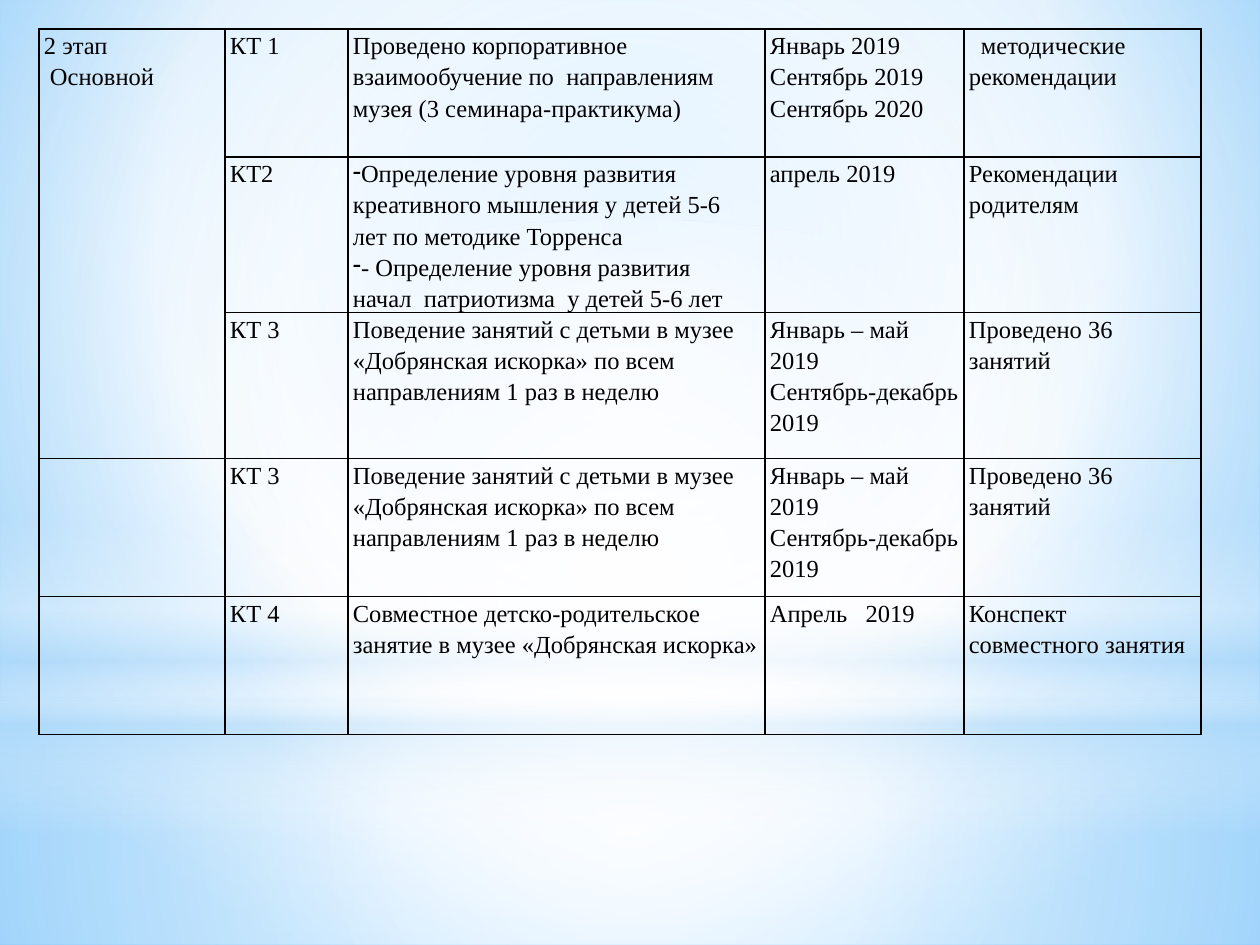
from dataclasses import dataclass
from lxml import etree
from pptx import Presentation
from pptx import util as u
from pptx.dml.color import RGBColor
from pptx.enum import shapes
from pptx.oxml import parse_xml
from pptx.oxml.ns import nsdecls, qn


@dataclass(frozen=True)
class Theme:
    font: str = "Times New Roman"
    size: int = 14
    line_spacing: float = 1.15
    ink: str = "000000"
    border: int = 1
    white: str = "FFFFFF"
    mist: str = "B4DCFA"
    sky: str = "9ED5FF"
    blue: str = "5BB9FF"


THEME = Theme()
PX_PER_INCH = 126
BLANK_LAYOUT = 6
CENTRE = (50, 50, 50, 50)

# Table content: a cell is a list of lines; a line is text or (text, option)
LESSONS = [
    ["КТ 3"],
    ["Поведение занятий с детьми в музее «Добрянская искорка» "
     "по всем направлениям 1 раз в неделю"],
    ["Январь – май 2019", "Сентябрь-декабрь 2019"],
    ["Проведено 36 занятий"],
]
ROWS = [
    [["2 этап", ("Основной", {"indent": 6})],
     ["КТ 1"],
     ["Проведено корпоративное взаимообучение по  направлениям "
      "музея (3 семинара-практикума)"],
     ["Январь 2019", "Сентябрь 2019", "Сентябрь 2020"],
     [("методические  рекомендации", {"indent": 12})]],
    [[],
     ["КТ2"],
     [("Определение уровня развития креативного мышления у детей 5-6 лет "
       "по методике Торренса", {"bullet": "-"}),
      ("- Определение уровня развития  начал  патриотизма  у детей 5-6 лет",
       {"bullet": "-"})],
     ["апрель 2019"],
     ["Рекомендации родителям"]],
    [[], *LESSONS],
    [[], *LESSONS],
    [[],
     ["КТ 4"],
     ["Совместное детско-родительское занятие в музее «Добрянская искорка»"],
     ["Апрель   2019"],
     ["Конспект совместного занятия"]],
]
COLUMN_WIDTHS = [186, 123, 417, 199, 237]
ROW_HEIGHTS = [128, 123, 146, 138, 138]
STAGE_ROWS = 3


def px(length):
    return u.Emu(round(length * u.Inches(1) / PX_PER_INCH))


def apply_gradient(fill, element, stops, centre=None):
    """Radial gradient towards centre (l, t, r, b), or top-down without it."""
    fill.solid()
    gradient = parse_xml(f'<a:gradFill {nsdecls("a")} rotWithShape="1"/>')
    stop_list = etree.SubElement(gradient, qn("a:gsLst"))
    for position, color, opacity in stops:
        stop = etree.SubElement(stop_list, qn("a:gs"), pos=str(position * 1000))
        rgb = etree.SubElement(stop, qn("a:srgbClr"), val=color)
        if opacity < 100:
            etree.SubElement(rgb, qn("a:alpha"), val=str(opacity * 1000))
    if centre:
        circle = etree.SubElement(gradient, qn("a:path"), path="circle")
        sides = {side: str(value * 1000) for side, value in zip("ltrb", centre)}
        etree.SubElement(circle, qn("a:fillToRect"), sides)
    else:
        etree.SubElement(gradient, qn("a:lin"), ang="5400000", scaled="0")
    solid = next(element.iter(qn("a:solidFill")))
    solid.getparent().replace(solid, gradient)


def add_glow(slide, kind, top, height, stops, centre=None):
    shape = slide.shapes.add_shape(kind, 0, px(top), px(1260), px(height))
    shape.shadow.inherit = False
    apply_gradient(shape.fill, shape.element, stops, centre)
    shape.line.fill.background()


def add_backdrop(slide):
    white, mist = THEME.white, THEME.mist
    rectangle, oval = shapes.MSO_SHAPE.RECTANGLE, shapes.MSO_SHAPE.OVAL
    apply_gradient(slide.background.fill, slide.element,
                   [(0, THEME.sky, 100), (60, white, 100), (100, THEME.blue, 100)],
                   (20, 10, 20, 60))
    add_glow(slide, rectangle, 703, 242,
             [(0, white, 91), (37, white, 76), (100, mist, 79)], CENTRE)
    add_glow(slide, rectangle, 0, 703,
             [(0, white, 89), (48, white, 62), (100, mist, 79)], CENTRE)
    add_glow(slide, rectangle, 519, 315,
             [(0, white, 0), (29, white, 30), (45, mist, 40),
              (55, white, 26), (65, mist, 60), (100, white, 0)])
    add_glow(slide, oval, 220, 703, [(0, white, 100), (56, white, 0)], CENTRE)


def write_line(paragraph, content, indent=0, bullet=None):
    paragraph.text = content
    paragraph.line_spacing = THEME.line_spacing
    font = paragraph.font
    font.name = THEME.font
    font.size = u.Pt(THEME.size)
    font.color.rgb = RGBColor.from_string(THEME.ink)
    properties = paragraph._p.get_or_add_pPr()
    if indent or bullet:
        properties.set("marL", "0")
        properties.set("indent", str(px(indent)))
    if bullet:
        mark = parse_xml(f'<a:buChar {nsdecls("a")} char="{bullet}"/>')
        properties.find(qn("a:defRPr")).addprevious(mark)


def add_borders(cell):
    properties = cell._tc.get_or_add_tcPr()
    for index, side in enumerate("LRTB"):
        properties.insert(index, parse_xml(
            f'<a:ln{side} {nsdecls("a")} w="{u.Pt(THEME.border)}"><a:solidFill>'
            f'<a:srgbClr val="{THEME.ink}"/></a:solidFill></a:ln{side}>'))


def fill_cell(cell, lines):
    cell.margin_left = cell.margin_right = px(5)
    cell.margin_top = cell.margin_bottom = 0
    cell.fill.background()
    add_borders(cell)
    frame = cell.text_frame
    for index, line in enumerate(lines):
        content, options = (line, {}) if isinstance(line, str) else line
        paragraph = frame.add_paragraph() if index else frame.paragraphs[0]
        write_line(paragraph, content, **options)


def add_plan_table(slide):
    frame = slide.shapes.add_table(
        len(ROWS), len(COLUMN_WIDTHS), px(39), px(29),
        px(sum(COLUMN_WIDTHS)), px(sum(ROW_HEIGHTS)))
    table = frame.table
    table.first_row = table.horz_banding = False
    for column, width in zip(table.columns, COLUMN_WIDTHS):
        column.width = px(width)
    for row, height, contents in zip(table.rows, ROW_HEIGHTS, ROWS):
        row.height = px(height)
        for cell, lines in zip(row.cells, contents):
            fill_cell(cell, lines)
    table.cell(0, 0).merge(table.cell(STAGE_ROWS - 1, 0))


def main():
    presentation = Presentation()
    presentation.slide_width, presentation.slide_height = px(1260), px(945)
    slide = presentation.slides.add_slide(presentation.slide_layouts[BLANK_LAYOUT])
    add_backdrop(slide)
    add_plan_table(slide)
    presentation.save("out.pptx")


if __name__ == "__main__":
    main()
